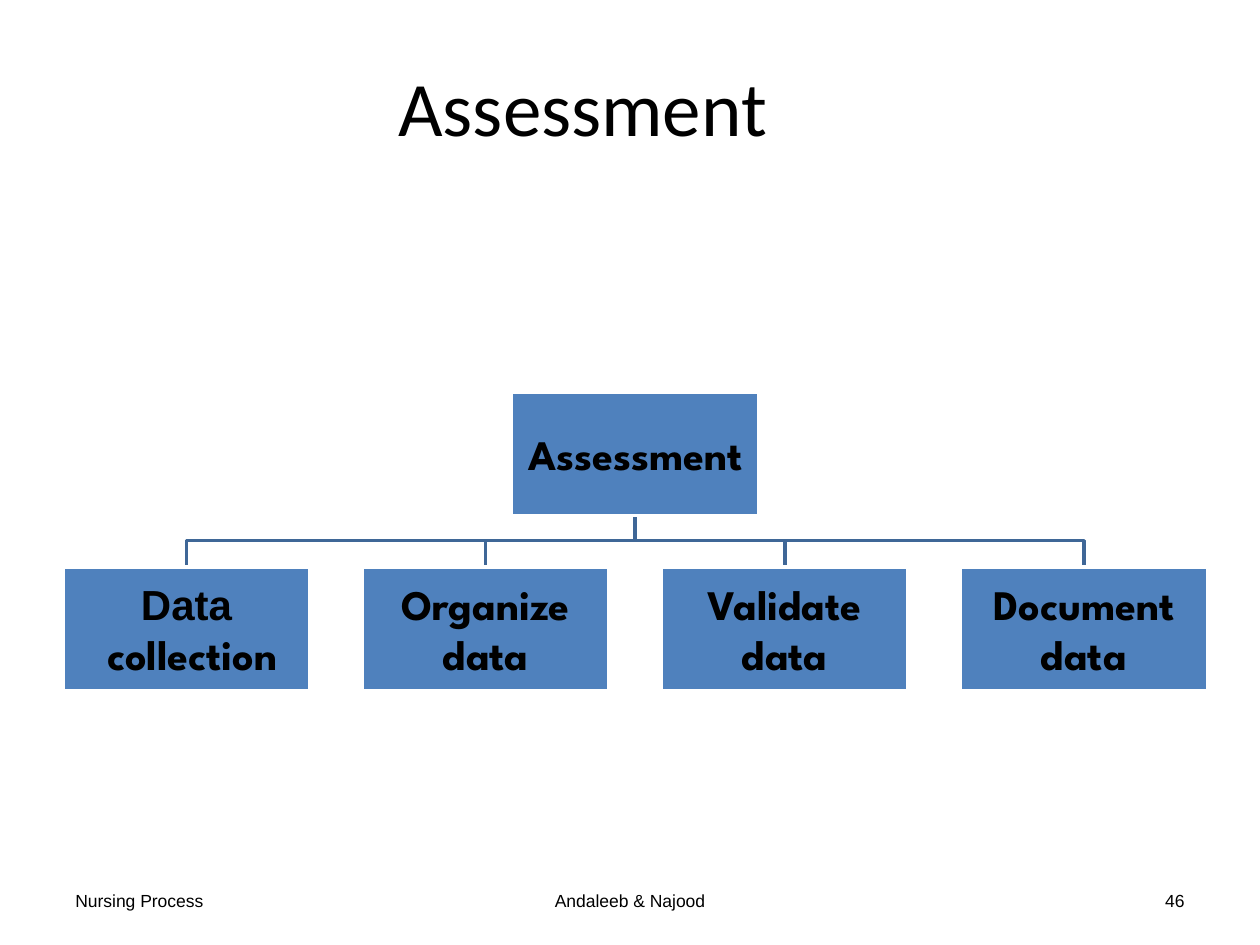
from pptx import Presentation
from pptx.dml.color import RGBColor
from pptx.enum import shapes, text
from pptx.util import Cm, Pt

BLACK = RGBColor(0x00, 0x00, 0x00)
WHITE = RGBColor(0xFF, 0xFF, 0xFF)
BLUE = RGBColor(0x4F, 0x81, 0xBD)
DARK_BLUE = RGBColor(0x3F, 0x67, 0x97)
LEFT, CENTER, RIGHT = text.PP_ALIGN.LEFT, text.PP_ALIGN.CENTER, text.PP_ALIGN.RIGHT

# Chart grid, in centimetres
BOX_W, BOX_H = 4.98, 2.49
ROW_LEFT, ROW_STEP = 1.27, 6.03
ROOT_TOP, ROW_TOP = 7.9, 11.43
BRANCH_Y = 10.9


def write_text(frame, spans, size=24, align=CENTER, bold=False, rtl=False, inset=None):
    """Fill a text frame with one paragraph of (words, font) spans."""
    frame.word_wrap = True
    frame.vertical_anchor = text.MSO_ANCHOR.MIDDLE
    if inset is not None:
        frame.margin_left = frame.margin_right = Cm(inset)
        frame.margin_top = frame.margin_bottom = Cm(inset)
    para = frame.paragraphs[0]
    para.alignment = align
    if rtl:
        para._p.get_or_add_pPr().set("rtl", "1")
    for words, font in spans:
        span = para.add_run()
        span.text = words
        span.font.name = font
        span.font.size = Pt(size)
        span.font.bold = bold
        span.font.color.rgb = BLACK


class Page:
    """The current slide and the style of its elements."""
    heading_font = "Calibri"
    body_font = "Arial"
    box_font = "League Spartan"
    line_width = Pt(2)

    def __init__(self, deck):
        self.shapes = deck.slides.add_slide(deck.slide_layouts[6]).shapes

    def label(self, words, left, top, width, height, font, size, align):
        box = self.shapes.add_textbox(Cm(left), Cm(top), Cm(width), Cm(height))
        write_text(box.text_frame, [(words, font)], size=size, align=align)

    def box(self, spans, left, top, rtl=False):
        box = self.shapes.add_shape(shapes.MSO_SHAPE.RECTANGLE,
                                    Cm(left), Cm(top), Cm(BOX_W), Cm(BOX_H))
        box.shadow.inherit = False
        box.fill.solid()
        box.fill.fore_color.rgb = BLUE
        box.line.color.rgb = WHITE
        box.line.width = self.line_width
        write_text(box.text_frame, spans, bold=True, rtl=rtl, inset=0.05)

    def branch(self, start_x, end_x):
        points = [(start_x, BRANCH_Y), (end_x, BRANCH_Y), (end_x, ROW_TOP)]
        builder = self.shapes.build_freeform(Cm(start_x), Cm(ROOT_TOP + BOX_H))
        builder.add_line_segments([(Cm(x), Cm(y)) for x, y in points], close=False)
        branch = builder.convert_to_shape()
        branch.shadow.inherit = False
        branch.fill.background()
        branch.line.color.rgb = DARK_BLUE
        branch.line.width = self.line_width


def main():
    deck = Presentation()
    deck.slide_width, deck.slide_height = Cm(25.4), Cm(19.05)
    page = Page(deck)

    # Footer
    for words, left, width, align in [("Nursing Process", 1.27, 5.92, LEFT),
                                      ("Andaleeb & Najood", 8.68, 8.04, CENTER),
                                      ("46", 18.21, 5.92, RIGHT)]:
        page.label(words, left, 17.65, width, 1.02, page.body_font, 10, align)

    # Title
    page.label("Assessment", 1.27, 0.33, 20.96, 3.61, page.heading_font, 44, CENTER)

    # Organisation chart: branches first, boxes above them
    steps = [
        [("Data ", page.body_font), ("collection ", page.box_font)],
        [("Organize data", page.box_font)],
        [("Validate data", page.box_font)],
        [("Document data", page.box_font)],
    ]
    lefts = [ROW_LEFT + i * ROW_STEP for i in range(len(steps))]
    root_left = (lefts[0] + lefts[-1]) / 2
    for left in reversed(lefts):
        page.branch(root_left + BOX_W / 2, left + BOX_W / 2)
    page.box([("Assessment", page.box_font)], root_left, ROOT_TOP)
    for spans, left in zip(steps, lefts):
        page.box(spans, left, ROW_TOP, rtl=True)

    deck.save("out.pptx")


if __name__ == "__main__":
    main()
